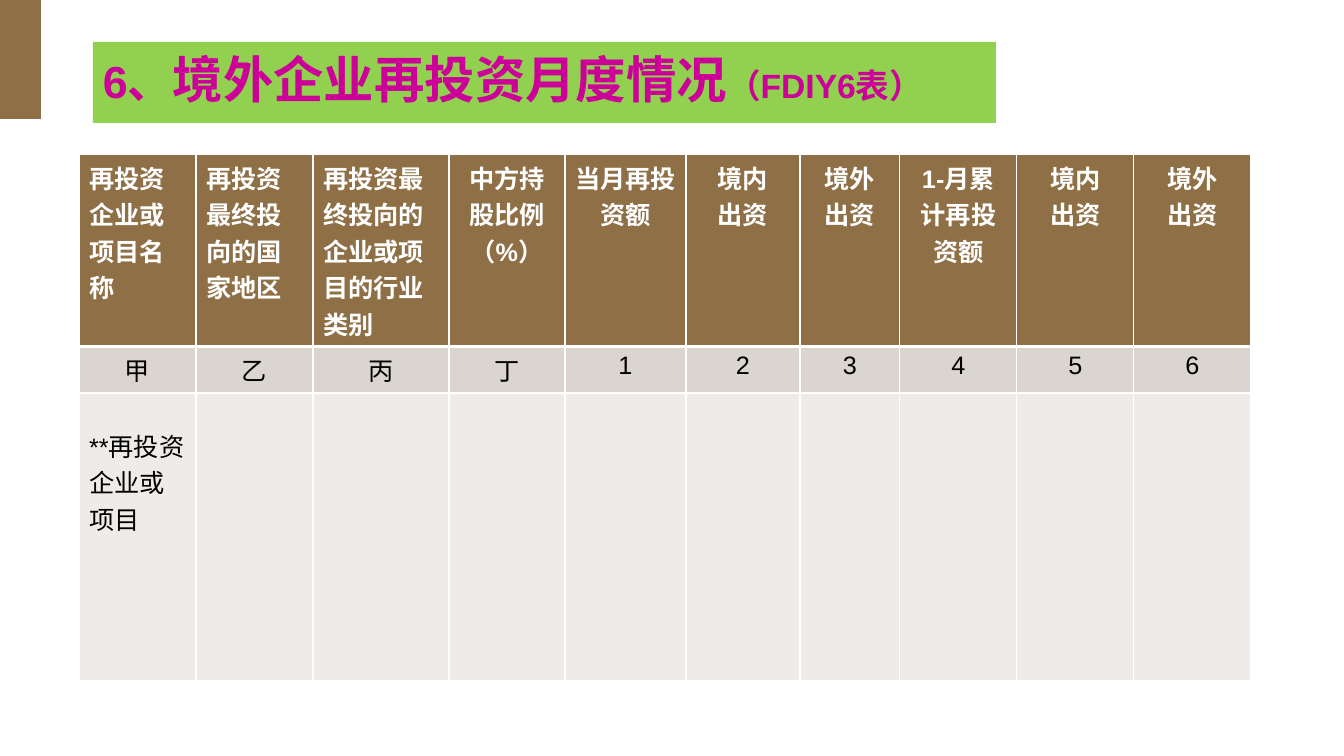
import pptx
import pptx.dml.color
import pptx.enum.shapes
import pptx.enum.text
import pptx.oxml
import pptx.oxml.ns
import pptx.util

EMU_PER_PX = 914400 / 100.8
FONT = "Arial"
COLORS = {
    "brown": "8F7046",
    "green": "92D050",
    "magenta": "CC0099",
    "code_row": "DBD5CF",
    "data_row": "EEEBE9",
    "white": "FFFFFF",
    "black": "000000",
}
COL_WIDTHS = [117, 117, 136, 116, 121, 114, 100, 117, 117, 117]
ROW_HEIGHTS = [192, 46, 288]
LEFT_COLS = 3
FUNDING = [["境内", "出资"], ["境外", "出资"]]
HEADERS = [
    ["再投资企业或", "项目名称"],
    ["再投资最终投向的国家地区"],
    ["再投资最终投向的企业或项目的行业类别"],
    ["中方持股比例（%）"],
    ["当月再投资额"],
    *FUNDING,
    ["1-月累计再投资额"],
    *FUNDING,
]
CODES = "甲乙丙丁123456"
PROJECT = "**再投资企业或项目"


def px(n):
    return pptx.util.Emu(round(n * EMU_PER_PX))


def rgb(name):
    return pptx.dml.color.RGBColor.from_string(COLORS[name])


def add_run(p, text, size, color, bold):
    r = p.add_run()
    r.text = text
    r.font.name = FONT
    r.font.size = pptx.util.Pt(size)
    r.font.bold = bold
    r.font.color.rgb = rgb(color)


def add_rect(slide, x, y, w, h, color):
    sp = slide.shapes.add_shape(
        pptx.enum.shapes.MSO_SHAPE.RECTANGLE, px(x), px(y), px(w), px(h))
    sp.shadow.inherit = False
    sp.fill.solid()
    sp.fill.fore_color.rgb = rgb(color)
    sp.line.fill.background()
    return sp


def add_title(slide):
    tf = add_rect(slide, 93, 42, 903, 81, "green").text_frame
    tf.word_wrap = True
    tf.vertical_anchor = pptx.enum.text.MSO_ANCHOR.MIDDLE
    p = tf.paragraphs[0]
    p.alignment = pptx.enum.text.PP_ALIGN.LEFT
    p.line_spacing = 0.9
    for text, size in [("6、", 32), ("境外企业再投资月度情况", 36),
                       ("（FDIY6表）", 24)]:
        add_run(p, text, size, "magenta", True)


def set_borders(cell, top, bottom):
    """Draw white cell borders; top and bottom are widths in points."""
    tc_pr = cell._tc.get_or_add_tcPr()
    for side, width in [("L", 1), ("R", 1), ("T", top), ("B", bottom)]:
        tc_pr.append(pptx.oxml.parse_xml(
            f'<a:ln{side} {pptx.oxml.ns.nsdecls("a")} w="{pptx.util.Pt(width)}">'
            f'<a:solidFill><a:srgbClr val="{COLORS["white"]}"/></a:solidFill>'
            f'</a:ln{side}>'))


def fill_cell(cell, lines, fill, color, bold, centered):
    cell.fill.solid()
    cell.fill.fore_color.rgb = rgb(fill)
    tf = cell.text_frame
    for i, line in enumerate(lines):
        p = tf.add_paragraph() if i else tf.paragraphs[0]
        if centered:
            p.alignment = pptx.enum.text.PP_ALIGN.CENTER
        add_run(p, line, 18, color, bold)


def add_table(slide):
    table = slide.shapes.add_table(
        len(ROW_HEIGHTS), len(COL_WIDTHS), px(79), px(154),
        px(sum(COL_WIDTHS)), px(sum(ROW_HEIGHTS))).table
    for row, height in zip(table.rows, ROW_HEIGHTS):
        row.height = px(height)
    for c, width in enumerate(COL_WIDTHS):
        table.columns[c].width = px(width)
        header, code, data = (table.cell(r, c) for r in range(3))
        set_borders(header, 1, 3)
        set_borders(code, 3, 1)
        set_borders(data, 1, 1)
        fill_cell(header, HEADERS[c], "brown", "white", True, c >= LEFT_COLS)
        fill_cell(code, [CODES[c]], "code_row", "black", False, True)
        fill_cell(data, [] if c else [PROJECT], "data_row", "black", False, False)
    table.cell(2, 0).margin_top = px(34)


def main():
    prs = pptx.Presentation()
    prs.slide_width, prs.slide_height = px(1344), px(756)
    slide = prs.slides.add_slide(prs.slide_layouts[6])
    add_rect(slide, -1, 0, 42, 119, "brown")
    add_title(slide)
    add_table(slide)
    prs.save("out.pptx")


if __name__ == "__main__":
    main()
